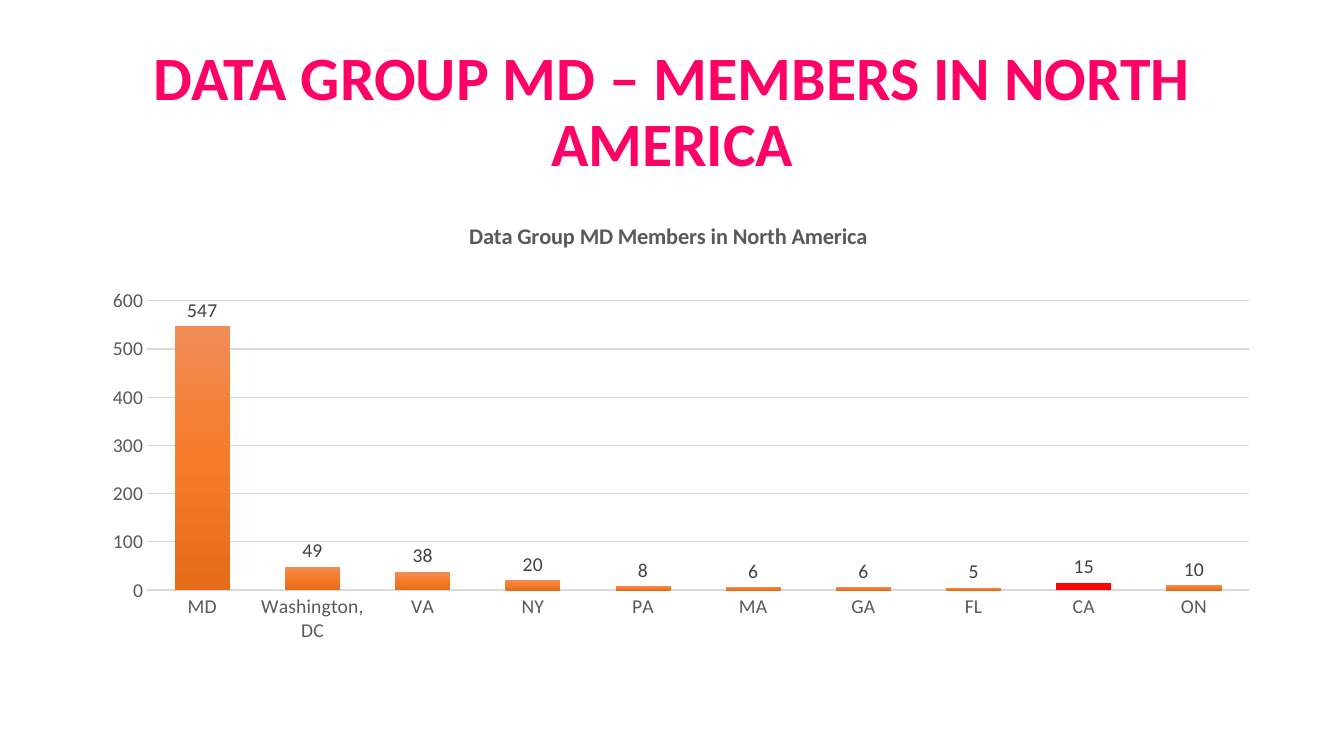
from pptx import Presentation
from pptx.chart.data import CategoryChartData as ChartData
from pptx.dml.color import RGBColor as Rgb
from pptx.enum.chart import XL_CHART_TYPE as ChartType
from pptx.enum.chart import XL_LABEL_POSITION as LabelPosition
from pptx.enum.chart import XL_TICK_MARK as TickMark
from pptx.enum.text import MSO_ANCHOR as Anchor
from pptx.enum.text import PP_ALIGN as Align
from pptx.oxml import parse_xml
from pptx.oxml.ns import nsdecls, qn
from pptx.util import Emu, Pt

PX = 9144
FONT = "Calibri"
COLORS = {
    "headline": "FF0066",
    "axis": "595959",
    "label": "404040",
    "grid": "D9D9D9",
    "highlight": "FF0000",
    "bar_top": "F18C57",
    "bar_middle": "F67B28",
    "bar_bottom": "E56C19",
}
MEMBERS = {
    "MD": 547, "Washington, DC": 49, "VA": 38, "NY": 20, "PA": 8,
    "MA": 6, "GA": 6, "FL": 5, "CA": 15, "ON": 10,
}
HIGHLIGHTED = "CA"
PLOT_LAYOUT = {"x": 0.079, "y": 0.193, "w": 0.89, "h": 0.563}


def px(*lengths):
    return [Emu(length * PX) for length in lengths]


def rgb(name):
    return Rgb.from_string(COLORS[name])


def style_font(font, size, color, bold=False):
    font.name = FONT
    font.size = Pt(size)
    font.bold = bold
    font.color.rgb = rgb(color)


def write_text(frame, text, size, color, bold=False, align=Align.CENTER, spacing=None):
    para = frame.paragraphs[0]
    para.alignment = align
    para.line_spacing = spacing
    span = para.add_run()
    span.text = text
    style_font(span.font, size, color, bold)


def add_headline(page, text):
    box = page.shapes.add_textbox(*px(92, 40, 1150, 145))
    frame = box.text_frame
    frame.word_wrap = True
    frame.vertical_anchor = Anchor.MIDDLE
    write_text(frame, text, 44, "headline", bold=True, spacing=0.9)


def style_axis(axis):
    axis.major_tick_mark = TickMark.NONE
    axis.minor_tick_mark = TickMark.NONE
    style_font(axis.tick_labels.font, 14, "axis")


def style_line(line, width):
    line.color.rgb = rgb("grid")
    line.width = Pt(width)


def style_axes(chart):
    category_axis, value_axis = chart.category_axis, chart.value_axis
    style_axis(category_axis)
    style_axis(value_axis)
    style_line(category_axis.format.line, 1)
    style_line(value_axis.major_gridlines.format.line, 0.75)
    value_axis.format.line.fill.background()
    value_axis.minimum_scale = 0
    value_axis.maximum_scale = 600
    value_axis.major_unit = 100


def fill_bars(series):
    stops = "".join(
        f'<a:gs pos="{position}"><a:srgbClr val="{COLORS[name]}"/></a:gs>'
        for position, name in ((0, "bar_top"), (50000, "bar_middle"), (100000, "bar_bottom"))
    )
    gradient = (
        f'<a:gradFill {nsdecls("a")} rotWithShape="1"><a:gsLst>{stops}</a:gsLst>'
        '<a:lin ang="5400000" scaled="0"/></a:gradFill>'
    )
    series.invert_if_negative = False
    series._element.get_or_add_spPr().append(parse_xml(gradient))
    fill = series.points[list(MEMBERS).index(HIGHLIGHTED)].format.fill
    fill.solid()
    fill.fore_color.rgb = rgb("highlight")


def label_bars(plot):
    plot.has_data_labels = True
    labels = plot.data_labels
    labels.show_value = True
    labels.position = LabelPosition.OUTSIDE_END
    style_font(labels.font, 14, "label")


def place_plot(chart):
    area = chart._chartSpace.chart.plotArea
    for layout in area.findall(qn("c:layout")):
        area.remove(layout)
    modes = '<c:xMode val="edge"/><c:yMode val="edge"/>'
    sizes = "".join(f'<c:{key} val="{share}"/>' for key, share in PLOT_LAYOUT.items())
    area.insert(0, parse_xml(
        f'<c:layout {nsdecls("c")}><c:manualLayout><c:layoutTarget val="inner"/>'
        f"{modes}{sizes}</c:manualLayout></c:layout>"
    ))


def add_member_chart(page, title):
    data = ChartData()
    data.categories = list(MEMBERS)
    data.add_series("Series 1", list(MEMBERS.values()))
    frame = page.shapes.add_chart(ChartType.COLUMN_CLUSTERED, *px(49, 200, 1228, 510), data)
    chart = frame.chart
    style_font(chart.font, 14, "axis")
    chart.has_legend = False
    chart.has_title = True
    chart.chart_title.include_in_layout = False
    write_text(chart.chart_title.text_frame, title, 16, "axis", bold=True)
    plot = chart.plots[0]
    plot.gap_width = 100
    plot.overlap = -24
    plot.vary_by_categories = False
    style_axes(chart)
    fill_bars(plot.series[0])
    label_bars(plot)
    place_plot(chart)


def main():
    deck = Presentation()
    deck.slide_width, deck.slide_height = px(1333, 750)
    page = deck.slides.add_slide(deck.slide_layouts[6])
    add_headline(page, "DATA GROUP MD – MEMBERS IN NORTH AMERICA")
    add_member_chart(page, "Data Group MD Members in North America")
    deck.save("out.pptx")


if __name__ == "__main__":
    main()
